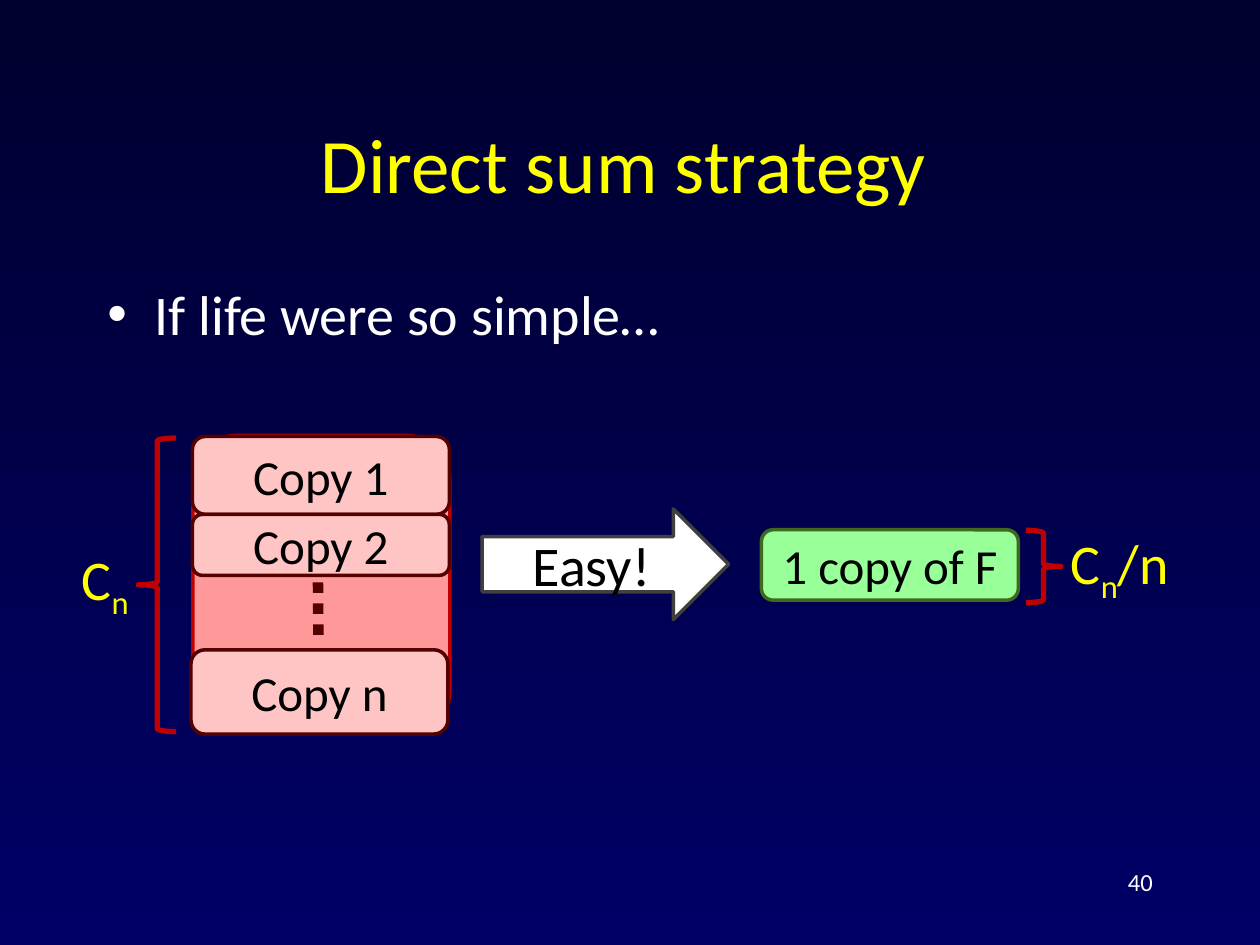
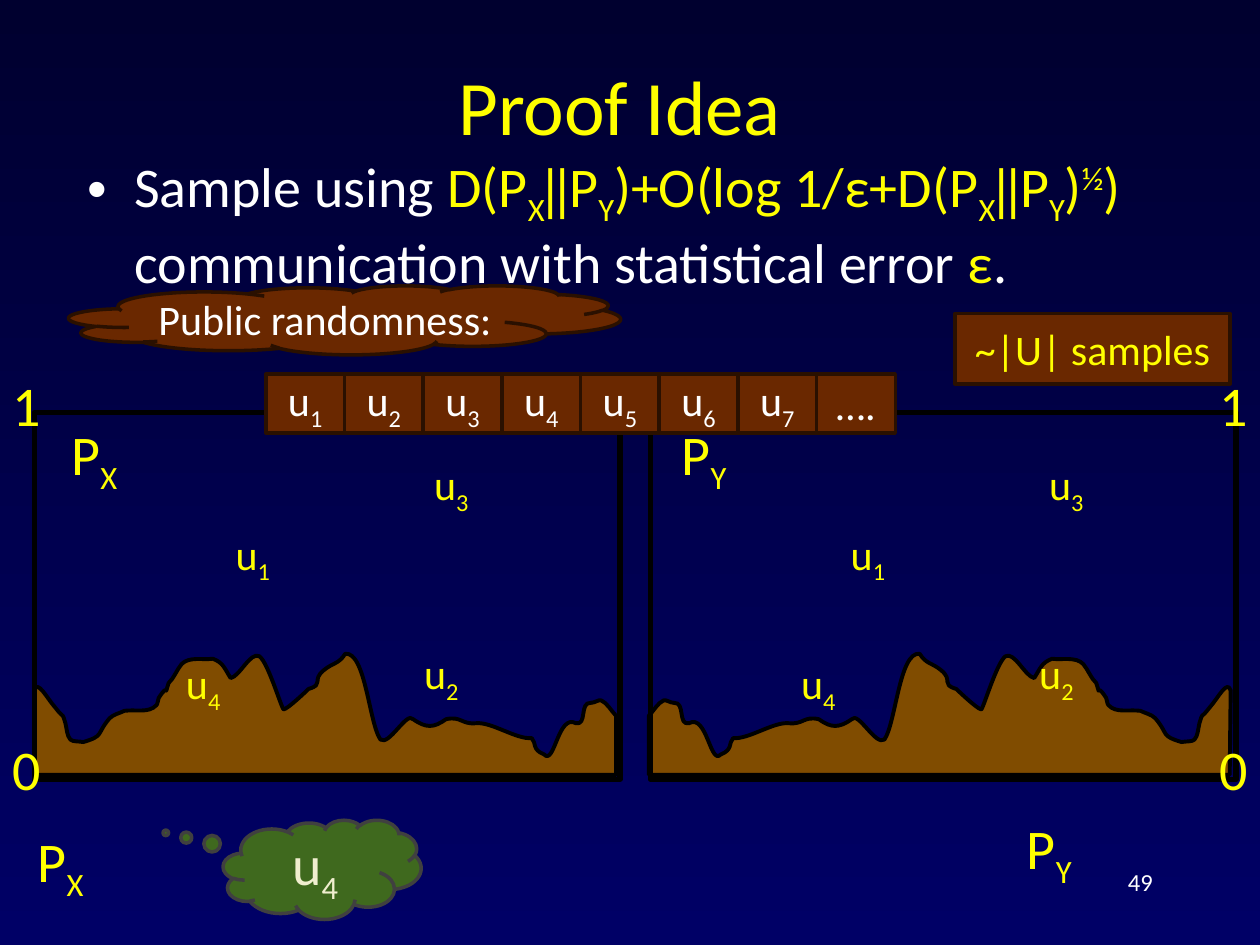
from dataclasses import dataclass
from typing import NamedTuple, Optional

from lxml import etree
from pptx import Presentation
from pptx import util as u
from pptx.dml.color import RGBColor
from pptx.enum import dml, shapes, text
from pptx.oxml.ns import qn

YELLOW, WHITE, BLACK = "FFFF00", "FFFFFF", "000000"
NIGHT_TOP, NIGHT_BOTTOM = "00002F", "000066"
RED, MAROON, GREY, GREEN = "C00000", "540000", "404040", "3F691E"
BROWN, DARK_BROWN, OCHRE = "6A2800", "2A1000", "804C00"
FONT = "Calibri"
LEFT, CENTER, RIGHT = text.PP_ALIGN.LEFT, text.PP_ALIGN.CENTER, text.PP_ALIGN.RIGHT
KIND = shapes.MSO_SHAPE
SUB, SUPER = -25, 30


class Place(NamedTuple):
    """Left, top, width and height in centimetres."""
    left: float
    top: float
    width: float
    height: float

    def lengths(self) -> list:
        return [u.Cm(value) for value in self]


class Span(NamedTuple):
    content: str
    base: int = 0
    color: Optional[str] = None
    font: str = FONT
    bold: bool = False


@dataclass
class Style:
    size: float
    color: str
    align: text.PP_ALIGN = LEFT


@dataclass
class Look:
    fill: Optional[str]
    line: str
    width: float = 2


TITLE = Style(44, YELLOW, CENTER)
BODY = Style(32, WHITE)
NUMBER = Style(14, WHITE, RIGHT)
BIG_LABEL = Style(32, YELLOW)
SMALL_LABEL = Style(24, YELLOW)
COPY_TEXT = Style(28, BLACK, CENTER)
TILE_TEXT = Style(24, WHITE, CENTER)
COPY_LOOK = Look("FFC5C5", MAROON)
BRACE_LOOK = Look(None, RED, 3)
TILE_LOOK = Look(BROWN, DARK_BROWN)
FRAME_LOOK = Look(None, BLACK, 3)

# Left distribution in centimetres: its floor, then its ridge from right to
# left, each curve as two control points and an end point.
FLOOR = [(0.71, 15.62), (11.23, 15.62), (12.42, 15.62), (12.42, 14.43)]
RIDGE = [
    ((12.32, 14.33), (12.24, 14.17), (12.12, 14.12)),
    ((12.07, 14.1), (11.99, 14.17), (11.91, 14.17)),
    ((11.68, 14.15), (11.84, 14.63), (11.61, 14.58)),
    ((11.25, 14.38), (11.18, 15.44), (10.97, 15.21)),
    ((10.72, 15.11), (10.82, 14.99), (10.72, 14.88)),
    ((10.41, 14.91), (9.91, 14.55), (9.6, 14.58)),
    ((9.3, 14.61), (9.3, 14.43), (8.99, 14.5)),
    ((8.74, 14.68), (8.59, 14.68), (8.33, 14.5)),
    ((8.2, 14.33), (7.85, 15.04), (7.67, 14.91)),
    ((7.44, 14.58), (7.37, 13.13), (6.96, 13.18)),
    ((6.83, 13.39), (6.71, 13.36), (6.53, 13.51)),
    ((6.27, 13.72), (6.55, 13.79), (6.22, 13.89)),
    ((6.17, 13.94), (5.79, 14.3), (5.72, 14.3)),
    ((5.69, 14.33), (5.41, 13.36), (5.23, 13.23)),
    ((5.05, 13.13), (4.83, 13.64), (4.65, 13.67)),
    ((4.52, 13.46), (4.5, 13.36), (4.29, 13.28)),
    ((4.09, 13.31), (3.81, 13.23), (3.66, 13.39)),
    ((3.56, 13.51), (3.51, 13.67), (3.4, 13.77)),
    ((3.28, 14.15), (3.45, 13.69), (3.2, 14.07)),
    ((3.18, 14.12), (3.18, 14.2), (3.15, 14.22)),
    ((3, 14.38), (2.74, 14.3), (2.51, 14.33)),
    ((2.41, 14.38), (2.29, 14.4), (2.21, 14.48)),
    ((1.93, 14.81), (2.11, 14.83), (1.68, 14.96)),
    ((1.6, 14.94), (1.47, 14.96), (1.42, 14.91)),
    ((1.35, 14.83), (1.35, 14.71), (1.32, 14.58)),
    ((1.24, 14.33), (1.32, 14.53), (1.12, 14.27)),
    ((0.94, 14.07), (0.76, 13.69), (0.69, 13.92)),
]
MIRROR_SUM = 25.5


def rgb(color: str) -> RGBColor:
    return RGBColor.from_string(color)


def indexed(letter: str, index: str) -> list[Span]:
    return [Span(letter), Span(index, SUB)]


def write(box, spans: list[Span], style: Style) -> None:
    para = box.text_frame.paragraphs[0]
    para.alignment = style.align
    for item in spans:
        span = para.add_run()
        span.text = item.content
        span.font.name = item.font
        span.font.size = u.Pt(style.size)
        span.font.bold = item.bold
        span.font.color.rgb = rgb(item.color or style.color)
        if item.base:
            span._r.get_or_add_rPr().set("baseline", str(item.base * 1000))


def fill_placeholder(box, place: Place, spans: list[Span], style: Style) -> None:
    box.left, box.top, box.width, box.height = place.lengths()
    box.text_frame.auto_size = text.MSO_AUTO_SIZE.NONE
    write(box, spans, style)


def add_label(page, place: Place, spans: list[Span], style: Style) -> None:
    box = page.shapes.add_textbox(*place.lengths())
    box.text_frame.word_wrap = True
    write(box, spans, style)


def apply_look(shape, look: Look) -> None:
    shape.shadow.inherit = False
    if look.fill:
        shape.fill.solid()
        shape.fill.fore_color.rgb = rgb(look.fill)
    else:
        shape.fill.background()
    shape.line.color.rgb = rgb(look.line)
    shape.line.width = u.Pt(look.width)


def add_figure(page, kind: KIND, place: Place, look: Look,
               spans: Optional[list[Span]] = None, style: Style = TILE_TEXT):
    shape = page.shapes.add_shape(kind, *place.lengths())
    apply_look(shape, look)
    if spans:
        shape.text_frame.vertical_anchor = text.MSO_ANCHOR.MIDDLE
        write(shape, spans, style)
    return shape


def add_dots(page, start: tuple[float, float], end: tuple[float, float]) -> None:
    dots = page.shapes.add_connector(
        shapes.MSO_CONNECTOR.STRAIGHT, *[u.Cm(value) for value in (*start, *end)])
    dots.line.color.rgb = rgb(MAROON)
    dots.line.width = u.Pt(6)
    dots.line.dash_style = dml.MSO_LINE.ROUND_DOT
    etree.SubElement(dots._element.spPr, qn("a:effectLst"))


def add_hills(page, mirrored: bool) -> None:
    """Draw the outline with straight sides, then bend the ridge into curves."""
    def spot(point: tuple[float, float]) -> tuple[int, int]:
        x, y = point
        return u.Cm(MIRROR_SUM - x if mirrored else x), u.Cm(y)

    corners = [spot(point) for point in (*FLOOR, *[curve[-1] for curve in RIDGE], FLOOR[0])]
    builder = page.shapes.build_freeform(*corners[0])
    builder.add_line_segments(corners[1:], close=True)
    hills = builder.convert_to_shape()
    apply_look(hills, Look(OCHRE, BLACK, 2.25))
    sides = list(hills._element.iter(qn("a:lnTo")))
    for side, curve in zip(sides[len(FLOOR) - 1:], RIDGE):
        side.tag = qn("a:cubicBezTo")
        for order, control in enumerate(curve[:2]):
            x, y = spot(control)
            point = etree.Element(qn("a:pt"), x=str(x - hills.left), y=str(y - hills.top))
            side.insert(order, point)


def paint_background(deck) -> None:
    fill = deck.slide_master.background.fill
    fill.gradient()
    fill.gradient_angle = 270
    for stop, color in zip(fill.gradient_stops, (NIGHT_TOP, NIGHT_BOTTOM)):
        stop.color.rgb = rgb(color)


def add_page(deck, number: int, title: str, title_place: Place,
             bullet: list[Span], bullet_place: Place):
    page = deck.slides.add_slide(deck.slide_layouts[1])
    fill_placeholder(page.shapes.title, title_place, [Span(title)], TITLE)
    fill_placeholder(page.placeholders[1], bullet_place, bullet, BODY)
    add_label(page, Place(18.21, 17.35, 5.28, 1.27), [Span(str(number))], NUMBER)
    return page


def build_strategy(deck) -> None:
    page = add_page(deck, 40, "Direct sum strategy", Place(1.02, 1.69, 23.11, 3.18),
                    [Span("If life were so simple…")], Place(1.91, 5.51, 22.56, 7.21))
    add_figure(page, KIND.ROUNDED_RECTANGLE, Place(3.89, 8.78, 5.18, 6.02),
               Look("FF9999", RED))
    add_figure(page, KIND.ROUNDED_RECTANGLE, Place(15.35, 10.68, 5.18, 1.42),
               Look("99FF99", GREEN), [Span("1 copy of F")], COPY_TEXT)
    add_figure(page, KIND.LEFT_BRACE, Place(2.79, 8.83, 0.76, 5.92), BRACE_LOOK)
    add_figure(page, KIND.RIGHT_BRACE, Place(20.68, 10.69, 0.71, 1.46), BRACE_LOOK)
    cost = indexed("C", "n")
    add_label(page, Place(1.4, 10.86, 2.29, 1.63), cost, BIG_LABEL)
    add_label(page, Place(21.34, 10.52, 2.87, 2.54), [*cost, Span("/n")], BIG_LABEL)
    add_figure(page, KIND.RIGHT_ARROW, Place(9.72, 10.26, 4.97, 2.23),
               Look(WHITE, GREY), [Span("Easy!")], Style(32, BLACK, CENTER))
    for name, left, top, height in (("1", 3.88, 8.8, 1.57), ("2", 3.88, 10.37, 1.23),
                                    ("n", 3.85, 13.1, 1.7)):
        add_figure(page, KIND.ROUNDED_RECTANGLE, Place(left, top, 5.18, height),
                   COPY_LOOK, [Span(f"Copy {name}")], COPY_TEXT)
    add_dots(page, (6.41, 11.74), (6.42, 12.96))


def divergence(opening: str) -> list[Span]:
    return [Span(opening, color=YELLOW), Span("X", SUB, YELLOW),
            Span("||", color=YELLOW, font="Times New Roman", bold=True),
            Span("P", color=YELLOW), Span("Y", SUB, YELLOW)]


def build_proof(deck) -> None:
    bullet = [Span("Sample using "), *divergence("D(P"),
              *divergence(")+O(log 1/ε+D(P"), Span(")", color=YELLOW),
              Span("½", SUPER, YELLOW), Span(") ", color=YELLOW),
              Span("communication with statistical error "),
              Span("ε", color=YELLOW), Span(".")]
    page = add_page(deck, 49, "Proof Idea", Place(1.7, 0.53, 21.59, 3.18),
                    bullet, Place(1.5, 2.92, 23.32, 3.2))

    def add_distribution_name(index: str, left: float, top: float) -> None:
        width = {"X": 1.68, "Y": 1.85}[index]
        add_label(page, Place(left, top, width, 1.63), indexed("P", index), BIG_LABEL)

    def add_frame(left: float) -> None:
        add_figure(page, KIND.RECTANGLE, Place(left, 8.32, 11.81, 7.39), FRAME_LOOK)

    add_hills(page, mirrored=False)
    add_distribution_name("X", 0.51, 16.54)
    add_hills(page, mirrored=True)
    add_distribution_name("Y", 20.45, 16.28)
    add_frame(0.69)
    samples = (("1", 4.5, 10.52), ("2", 8.3, 12.93), ("3", 8.5, 9.12), ("4", 3.5, 13.13))
    for index, left, top in samples:
        pair = page.shapes.add_group_shape()
        for shift in (0, 12.4):
            add_label(pair, Place(left + shift, top, 1.6, 1.27),
                      indexed("u", index), SMALL_LABEL)
    add_frame(13.11)

    thought = add_figure(page, KIND.CLOUD_CALLOUT, Place(4.5, 16.53, 3.99, 2),
                         Look(GREEN, GREY), indexed("u", "4"), Style(32, "F0EECF", CENTER))
    thought.adjustments[0], thought.adjustments[1] = -0.79, -0.37
    frame = thought.text_frame
    frame.margin_left = frame.margin_right = frame.margin_top = frame.margin_bottom = 0
    add_figure(page, KIND.RECTANGLE, Place(19.25, 6.32, 5.55, 1.42), TILE_LOOK,
               [Span("~|U| samples")], Style(24, YELLOW, CENTER))
    add_figure(page, KIND.CLOUD, Place(1.39, 5.76, 11.12, 1.39), TILE_LOOK,
               [Span("Public randomness:")])

    tiles = [indexed("u", str(index)) for index in range(1, 8)] + [[Span("….")]]
    tile_width = 12.69 / len(tiles)
    row = page.shapes.add_group_shape()
    for column, spans in enumerate(tiles):
        add_figure(row, KIND.RECTANGLE,
                   Place(5.36 + column * tile_width, 7.54, tile_width, 1.19),
                   TILE_LOOK, spans)

    add_distribution_name("X", 1.19, 8.33)
    add_distribution_name("Y", 13.49, 8.33)
    for mark, top in (("1", 7.34), ("0", 14.68)):
        for left in (0, 24.33):
            add_label(page, Place(left, top, 1.07, 1.63), [Span(mark)], BIG_LABEL)


def main() -> None:
    deck = Presentation()
    deck.slide_width, deck.slide_height = u.Cm(25.4), u.Cm(19.05)
    paint_background(deck)
    build_strategy(deck)
    build_proof(deck)
    deck.save("out.pptx")


if __name__ == "__main__":
    main()
